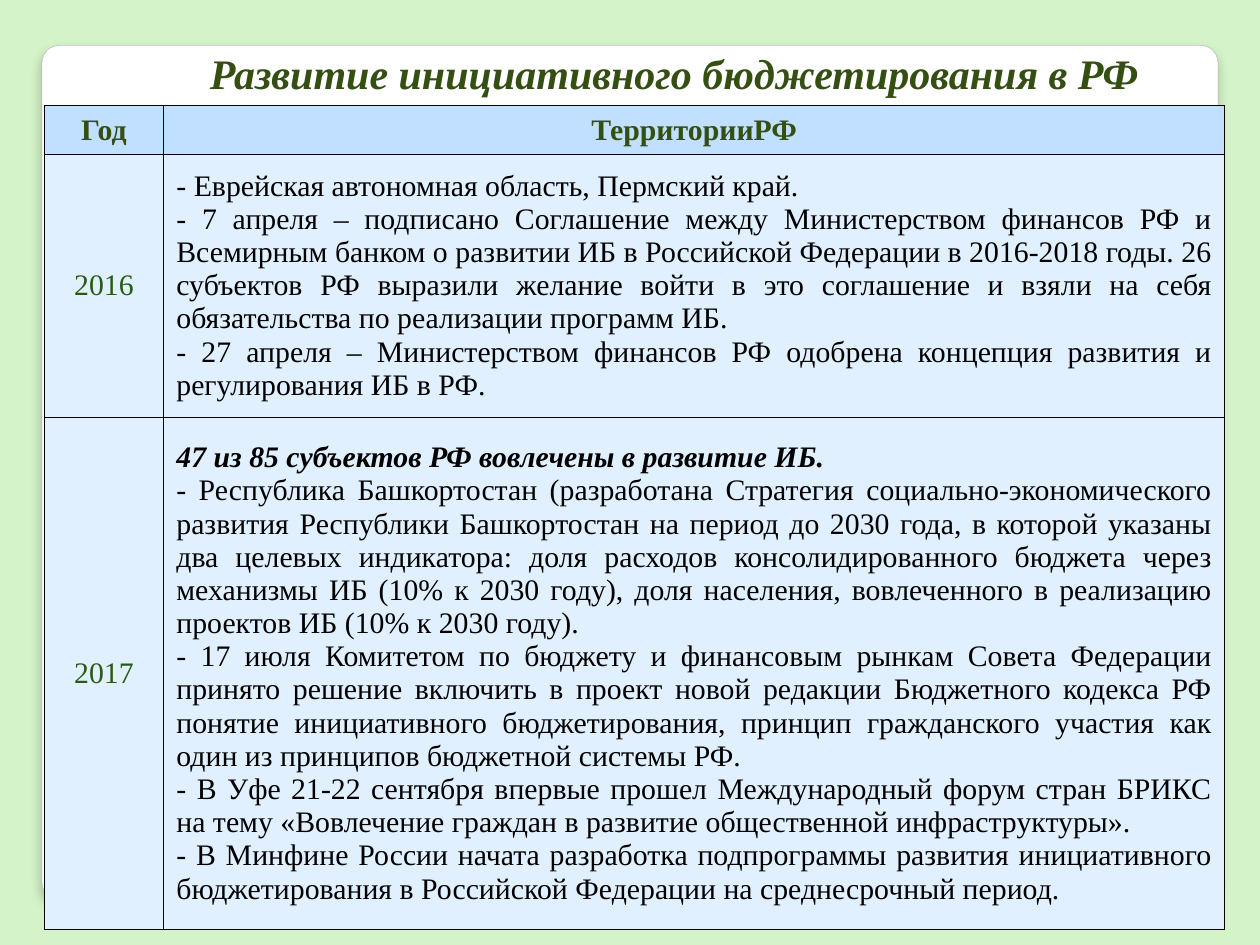
from pptx import Presentation
from pptx.dml.color import RGBColor
from pptx.enum.shapes import MSO_SHAPE
from pptx.enum.text import MSO_ANCHOR, PP_ALIGN
from pptx.oxml import parse_xml
from pptx.oxml.ns import nsdecls
from pptx.util import Pt

FONT = "Times New Roman"
PAGE = RGBColor(0xD5, 0xF3, 0xC9)
PANEL_LINE = RGBColor(0xA4, 0xA4, 0xA4)
HEADER_FILL = RGBColor(0xC1, 0xE0, 0xFF)
BODY_FILL = RGBColor(0xE1, 0xF0, 0xFF)
OLIVE = RGBColor(0x35, 0x4F, 0x12)
GREEN = RGBColor(0x28, 0x5B, 0x14)
BLACK = RGBColor(0, 0, 0)

PANEL_STOPS = [(0, "FFFFFF"), (98, "FFFFFF"), (99, "F7F7F7"), (100, "DADADA")]

TERRITORIES_2016 = [
    "- Еврейская автономная область, Пермский край.",
    "- 7 апреля – подписано Соглашение между Министерством финансов РФ и "
    "Всемирным банком о развитии ИБ в Российской Федерации в 2016-2018 годы. "
    "26 субъектов РФ выразили желание войти в это соглашение и взяли на себя "
    "обязательства по реализации программ ИБ.",
    "- 27 апреля – Министерством финансов РФ одобрена концепция развития и "
    "регулирования ИБ в РФ.",
]
LEAD_2017 = "47 из 85 субъектов РФ вовлечены в развитие ИБ."
# A leading space marks a paragraph with a dash bullet
TERRITORIES_2017 = [
    LEAD_2017,
    " Республика Башкортостан (разработана Стратегия социально-экономического "
    "развития Республики Башкортостан на период до 2030 года, в которой указаны "
    "два целевых индикатора: доля расходов консолидированного бюджета через "
    "механизмы ИБ (10% к 2030 году), доля населения, вовлеченного в реализацию "
    "проектов ИБ (10% к 2030 году).",
    "- 17 июля Комитетом по бюджету и финансовым рынкам Совета Федерации принято "
    "решение включить в проект новой редакции Бюджетного кодекса РФ понятие "
    "инициативного бюджетирования, принцип гражданского участия как один из "
    "принципов бюджетной системы РФ.",
    "- В Уфе 21-22 сентября впервые прошел Международный форум стран БРИКС на "
    "тему «Вовлечение граждан в развитие общественной инфраструктуры».",
    " В Минфине России начата разработка подпрограммы развития инициативного "
    "бюджетирования в Российской Федерации на среднесрочный период.",
]
ROWS = [
    ("Год", ["ТерриторииРФ"]),
    ("2016", TERRITORIES_2016),
    ("2017", TERRITORIES_2017),
]
COL_WIDTHS = [68.4, 606.24]
ROW_HEIGHTS = [28, 150, 293]


def add_text(p, text, size, color, align, bold=False, italic=False):
    p.alignment = align
    r = p.add_run()
    r.text = text
    r.font.name = FONT
    r.font.size = Pt(size)
    r.font.color.rgb = color
    r.font.bold = bold
    r.font.italic = italic


def style_cell(cell, fill):
    """Add thin black borders, then the fill, which must follow them."""
    tc_pr = cell._tc.get_or_add_tcPr()
    for side in "LRTB":
        tc_pr.append(parse_xml(
            f'<a:ln{side} {nsdecls("a")} w="{Pt(0.5)}"><a:solidFill>'
            f'<a:srgbClr val="{BLACK}"/></a:solidFill></a:ln{side}>'))
    cell.fill.solid()
    cell.fill.fore_color.rgb = fill
    cell.vertical_anchor = MSO_ANCHOR.MIDDLE


prs = Presentation()
prs.slide_width, prs.slide_height = Pt(720), Pt(540)
s = prs.slides.add_slide(prs.slide_layouts[6])
s.background.fill.solid()
s.background.fill.fore_color.rgb = PAGE

# White rounded panel
panel = s.shapes.add_shape(MSO_SHAPE.ROUNDED_RECTANGLE,
                           Pt(24), Pt(26), Pt(672), Pt(488))
panel.adjustments[0] = 0.02
stops = "".join(f'<a:gs pos="{pos * 1000}"><a:srgbClr val="{rgb}"/></a:gs>'
                for pos, rgb in PANEL_STOPS)
sp_pr = panel._element.spPr
sp_pr.append(parse_xml(
    f'<a:gradFill {nsdecls("a")}><a:gsLst>{stops}</a:gsLst>'
    '<a:lin ang="5400000" scaled="0"/></a:gradFill>'))
panel.line.color.rgb = PANEL_LINE
panel.line.width = Pt(0.16)
panel.shadow.inherit = False
sp_pr[-1].append(parse_xml(
    f'<a:outerShdw {nsdecls("a")} blurRad="{Pt(6)}" dist="{Pt(4)}" dir="5400000" '
    'algn="t" rotWithShape="0"><a:srgbClr val="000000"><a:alpha val="25000"/>'
    '</a:srgbClr></a:outerShdw>'))

# Table of years and territories
frame = s.shapes.add_table(len(ROWS), 2, Pt(25.2), Pt(60.3),
                           Pt(sum(COL_WIDTHS)), Pt(sum(ROW_HEIGHTS)))
table = frame.table
for col, width in zip(table.columns, COL_WIDTHS):
    col.width = Pt(width)
for i, (year, territories) in enumerate(ROWS):
    table.rows[i].height = Pt(ROW_HEIGHTS[i])
    header = i == 0
    year_cell, text_cell = table.cell(i, 0), table.cell(i, 1)
    for cell in (year_cell, text_cell):
        style_cell(cell, HEADER_FILL if header else BODY_FILL)
    add_text(year_cell.text_frame.paragraphs[0], year, 17,
             OLIVE if header else GREEN, PP_ALIGN.CENTER, bold=header)
    tf = text_cell.text_frame
    for j, text in enumerate(territories):
        p = tf.add_paragraph() if j else tf.paragraphs[0]
        if text.startswith(" "):
            p_pr = p._p.get_or_add_pPr()
            p_pr.set("marL", "0")
            p_pr.set("indent", "0")
            p_pr.append(parse_xml(f'<a:buFont {nsdecls("a")} typeface="{FONT}"/>'))
            p_pr.append(parse_xml(f'<a:buChar {nsdecls("a")} char="-"/>'))
        lead = text == LEAD_2017
        add_text(p, text, 17, OLIVE if header else BLACK,
                 PP_ALIGN.CENTER if header else PP_ALIGN.JUSTIFY,
                 bold=header or lead, italic=lead)

# Title
title = s.shapes.add_textbox(Pt(70.6), Pt(23.8), Pt(629.3), Pt(36))
title.text_frame.word_wrap = True
add_text(title.text_frame.paragraphs[0],
         "Развитие инициативного бюджетирования в РФ", 24, OLIVE,
         PP_ALIGN.CENTER, bold=True, italic=True)

prs.save("out.pptx")
